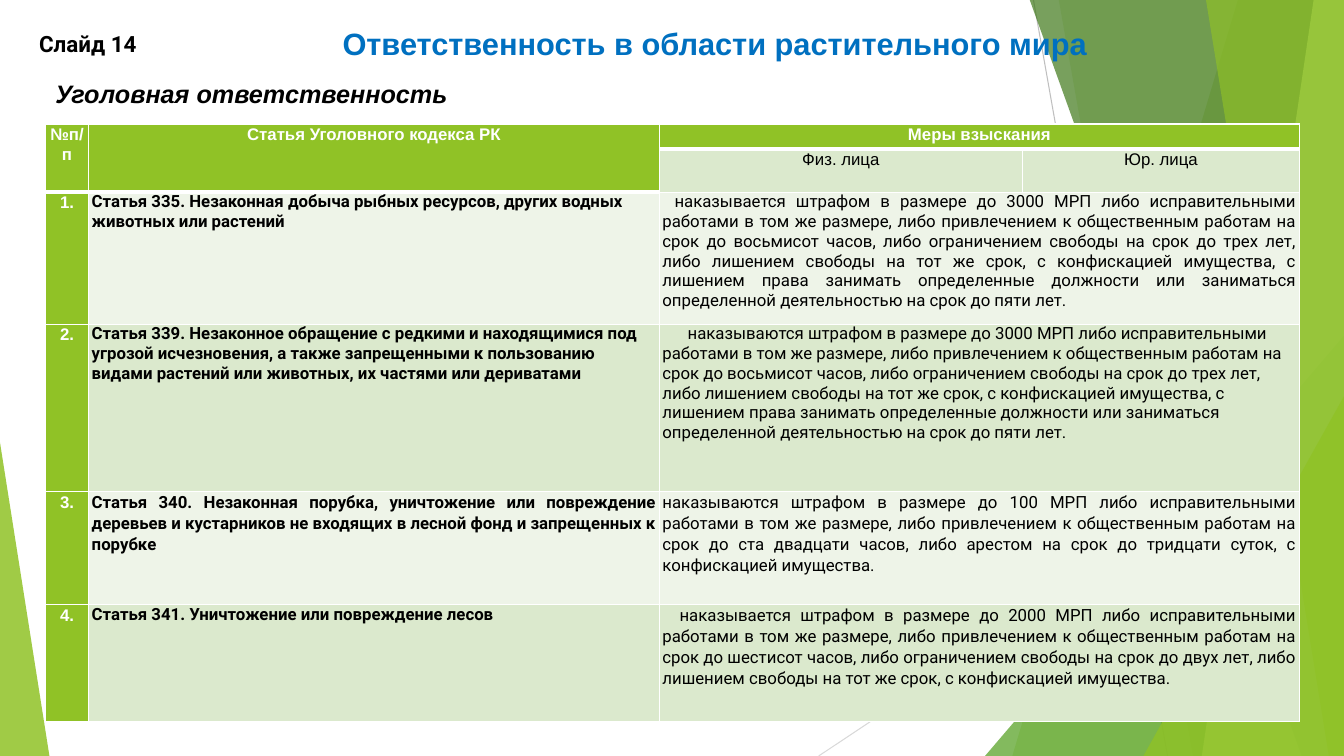
"""Build the slide on criminal liability for harm to plant life."""
from lxml import etree
from pptx import Presentation
from pptx.dml.color import RGBColor
from pptx.enum.shapes import MSO_CONNECTOR, MSO_SHAPE
from pptx.enum.text import PP_ALIGN
from pptx.oxml.ns import qn
from pptx.util import Inches, Pt

LINE = MSO_CONNECTOR.STRAIGHT
TRI = MSO_SHAPE.ISOSCELES_TRIANGLE
LEFT, MID, JUST = PP_ALIGN.LEFT, PP_ALIGN.CENTER, PP_ALIGN.JUSTIFY
WIDE, HIGH, TOP = 13.33, 7.5, -0.01
GREEN, PALE, LIGHT = "90C226", "DBE9CD", "EEF4E8"
WHITE, BLACK = "FFFFFF", "000000"

RAYS = [(10.25, 0, 11.58, HIGH, "BFBFBF"), (WIDE, 4.03, 8.12, HIGH, "D9D9D9")]
DECOR = [
    ("band", (12.28, 10.04), GREEN, 30),
    ("band", (10.5, 11.83), GREEN, 20),
    ("peak", (9.77, 3.33, 3.56, 1), "54A021", 72),
    ("band", (10.21, 12.91), "3F7819", 70),
    ("band", (13.03, 11.92), "C0E474", 70),
    ("band", (11.96, 13.18), GREEN, 65),
    ("peak", (11.34, 3.93, 1.99, 1), GREEN, 80),
    ("peak", (0, 4.39, 0.49, 0), GREEN, 85),
]
LABELS = [
    ("Ответственность в области растительного мира",
     (2.99, 0.2, 8.2, 0.47), 22, "Arial", "0070C0", MID, False),
    ("Уголовная ответственность",
     (0.45, 0.73, 9.69, 0.71), 18, "Arial", BLACK, JUST, True),
    ("Слайд 14", (0.29, 0.25, 1.2, 0.37), 16, "Roboto", BLACK, LEFT, False),
]
COLS = [0.43, 5.66, 3.6, 2.75]
ROWS = [0.25, 0.42, 1.31, 1.66, 1.12, 1.16]
HEADS = [
    (0, 0, "№п/п", True), (0, 1, "Статья Уголовного кодекса РК", True),
    (0, 2, "Меры взыскания", True),
    (1, 2, "Физ. лица", False), (1, 3, "Юр. лица", False),
]
MERGES = [(0, 0, 1, 0), (0, 1, 1, 1), (0, 2, 0, 3)]
LAWS = [
    ("Статья 335. Незаконная добыча рыбных ресурсов, других водных животных "
     "или растений", LEFT, 1,
     "наказывается штрафом в размере до 3000 МРП либо исправительными работами "
     "в том же размере, либо привлечением к общественным работам на срок до "
     "восьмисот часов, либо ограничением свободы на срок до трех лет, либо "
     "лишением свободы на тот же срок, с конфискацией имущества, с лишением "
     "права занимать определенные должности или заниматься определенной "
     "деятельностью на срок до пяти лет.", JUST, 1, 0.12),
    ("Статья 339. Незаконное обращение с редкими и находящимися под угрозой "
     "исчезновения, а также запрещенными к пользованию видами растений или "
     "животных, их частями или дериватами", LEFT, 1,
     "наказываются штрафом в размере до 3000 МРП либо исправительными работами "
     "в том же размере, либо привлечением к общественным работам на срок до "
     "восьмисот часов, либо ограничением свободы на срок до трех лет, либо "
     "лишением свободы на тот же срок, с конфискацией имущества, с лишением "
     "права занимать определенные должности или заниматься определенной "
     "деятельностью на срок до пяти лет.", LEFT, 1, 0.25),
    ("Статья 340. Незаконная порубка, уничтожение или повреждение деревьев и "
     "кустарников не входящих в лесной фонд и запрещенных к порубке", JUST, 1.07,
     "наказываются штрафом в размере до 100 МРП либо исправительными работами "
     "в том же размере, либо привлечением к общественным работам на срок до "
     "ста двадцати часов, либо арестом на срок до тридцати суток, с "
     "конфискацией имущества.", JUST, 1.07, 0),
    ("Статья 341. Уничтожение или повреждение лесов", JUST, 1,
     "наказывается штрафом в размере до 2000 МРП либо исправительными работами "
     "в том же размере, либо привлечением к общественным работам на срок до "
     "шестисот часов, либо ограничением свободы на срок до двух лет, либо "
     "лишением свободы на тот же срок, с конфискацией имущества.",
     JUST, 1.07, 0.17),
]


def paint(fill, color, alpha=100):
    fill.solid()
    fill.fore_color.rgb = RGBColor.from_string(color)
    if alpha < 100:
        tone = fill._xPr.find(qn("a:solidFill"))[0]
        etree.SubElement(tone, qn("a:alpha")).set("val", str(alpha * 1000))


def write(frame, text, size, face, color, align, bold=True, italic=False):
    frame.word_wrap = True
    frame.text = text
    para = frame.paragraphs[0]
    para.alignment = align
    font = para.runs[0].font
    font.size, font.name = Pt(size), face
    font.bold, font.italic = bold, italic
    paint(font.fill, color)
    return para


def add_decor(shapes):
    for x1, y1, x2, y2, color in RAYS:
        ray = shapes.add_connector(LINE, *map(Inches, (x1, y1, x2, y2)))
        ray.line.width = Pt(0.75)
        paint(ray.line.fill, color)
        etree.SubElement(ray._element.spPr, qn("a:effectLst"))
    for kind, place, color, alpha in DECOR:
        if kind == "band":
            head, foot = place
            pen = shapes.build_freeform(Inches(head), Inches(TOP))
            ends = [(WIDE, TOP), (WIDE, HIGH), (foot, HIGH)]
            pen.add_line_segments([(Inches(x), Inches(y)) for x, y in ends])
            part = pen.convert_to_shape()
        else:
            x, y, width, tip = place
            part = shapes.add_shape(TRI, *map(Inches, (x, y, width, HIGH - y)))
            part.adjustments[0] = tip
        part.shadow.inherit = False
        part.line.fill.background()
        paint(part.fill, color, alpha)


def style(cell, color, base):
    cell.margin_left = cell.margin_right = Inches(0.03)
    cell.margin_top = cell.margin_bottom = 0
    props = cell._tc.get_or_add_tcPr()
    for side, width in (("L", 1), ("R", 1), ("T", 1), ("B", base)):
        edge = etree.SubElement(props, qn("a:ln" + side), w=str(Pt(width)))
        fill = etree.SubElement(edge, qn("a:solidFill"))
        etree.SubElement(fill, qn("a:srgbClr"), val=WHITE)
    paint(cell.fill, color)


def put(cell, text, face, color, align, bold, gap=1.07, indent=0):
    para = write(cell.text_frame, text, 12, face, color, align, bold)
    para.line_spacing = gap
    if indent:
        para._p.get_or_add_pPr().set("indent", str(Inches(indent)))


def add_grid(shapes):
    size = (0.45, 1.23, sum(COLS), sum(ROWS))
    grid = shapes.add_table(len(ROWS), len(COLS), *map(Inches, size)).table
    for col, width in zip(grid.columns, COLS):
        col.width = Inches(width)
    for row, height in zip(grid.rows, ROWS):
        row.height = Inches(height)
    for r in range(len(ROWS)):
        for c in range(len(COLS)):
            head = r == 0 or (r == 1 and c < 2)
            shade = LIGHT if r in (2, 4) else PALE
            color = GREEN if head or c == 0 else shade
            style(grid.cell(r, c), color, 3 if head else 1)
    spans = MERGES + [(r, 2, r, 3) for r in range(2, len(ROWS))]
    for r1, c1, r2, c2 in spans:
        grid.cell(r1, c1).merge(grid.cell(r2, c2))
    for r, c, text, bold in HEADS:
        put(grid.cell(r, c), text, "Arial", WHITE if bold else BLACK, MID, bold)
    for num, law in enumerate(LAWS, 1):
        name, side, gap, term, align, space, indent = law
        r = num + 1
        put(grid.cell(r, 0), f"{num}.", "Arial", WHITE, MID, True)
        put(grid.cell(r, 1), name, "Roboto", BLACK, side, True, gap)
        put(grid.cell(r, 2), term, "Roboto", BLACK, align, False, space, indent)


def main():
    deck = Presentation()
    deck.slide_width, deck.slide_height = Inches(WIDE), Inches(HIGH)
    slide = deck.slides.add_slide(deck.slide_layouts[6])
    paint(slide.background.fill, WHITE)
    add_decor(slide.shapes)
    for text, place, size, face, color, align, italic in LABELS:
        box = slide.shapes.add_textbox(*map(Inches, place))
        write(box.text_frame, text, size, face, color, align, True, italic)
    add_grid(slide.shapes)
    deck.save("out.pptx")


if __name__ == "__main__":
    main()
